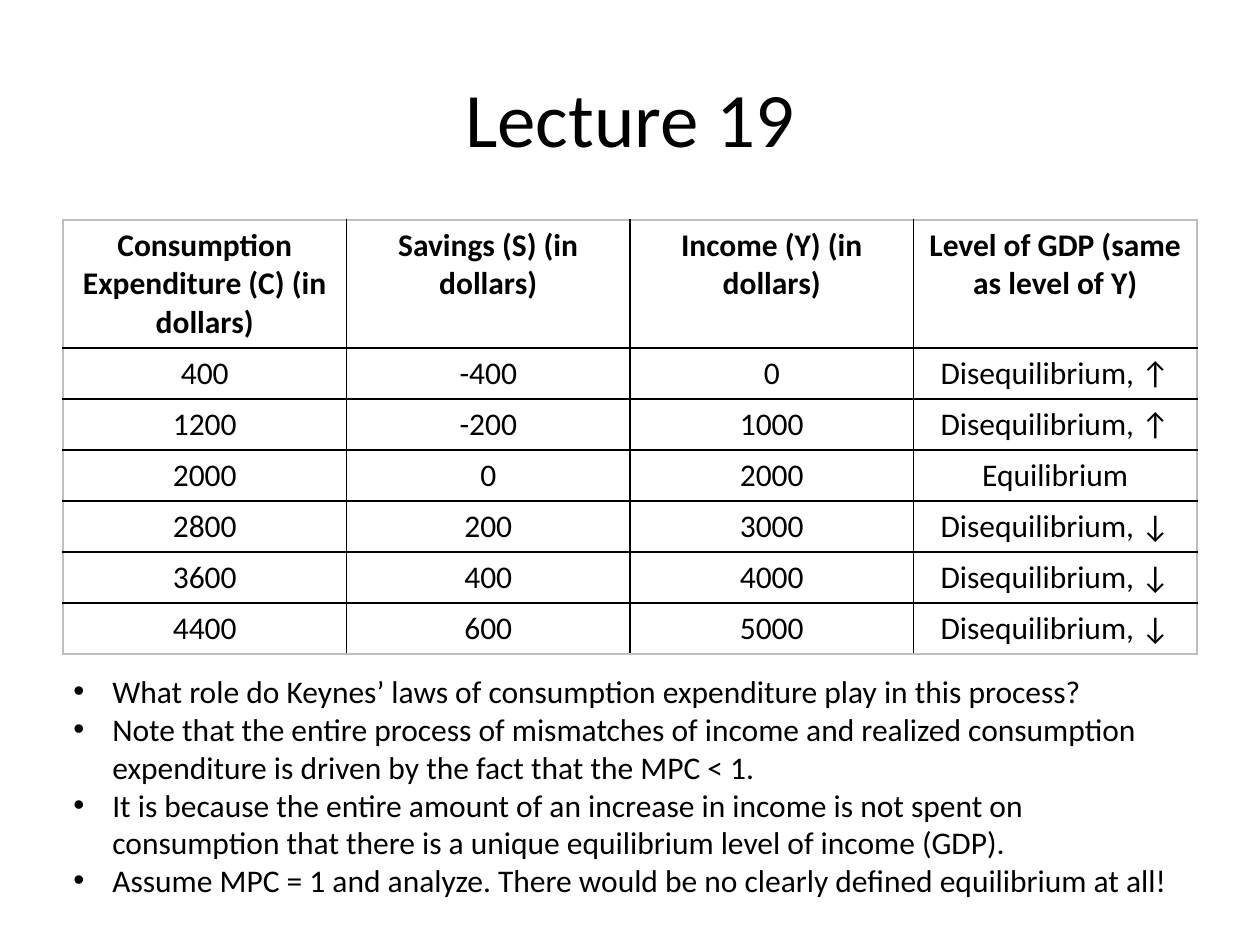
"""Build the Lecture 19 slide: an equilibrium table above four discussion points."""
from dataclasses import dataclass

from lxml import etree
from pptx import Presentation
from pptx.dml.color import RGBColor
from pptx.enum.text import MSO_ANCHOR, PP_ALIGN
from pptx.oxml.ns import qn
from pptx.util import Pt

CENTER = PP_ALIGN.CENTER
LEFT = PP_ALIGN.LEFT
MIDDLE = MSO_ANCHOR.MIDDLE
TOP = MSO_ANCHOR.TOP

EMU_PER_PX = 914400 / 126
COLORS = {"text": "000000", "grid": "000000", "frame": "BFBFBF"}
FONT = "Calibri"
BODY_SIZE = 18
BORDER_EMU = 12700
HEADER_HEIGHT = 128
ROW_HEIGHT = 51
BULLET_INDENT = 39


@dataclass(frozen=True)
class Box:
    left: int
    top: int
    width: int
    height: int

    def emu(self) -> tuple[int, ...]:
        return tuple(px(value) for value in (self.left, self.top, self.width, self.height))


@dataclass(frozen=True)
class TextBlock:
    box: Box
    lines: tuple[str, ...]
    size: int
    alignment: PP_ALIGN
    anchor: MSO_ANCHOR
    bulleted: bool


UP = "Disequilibrium, ↑"
DOWN = "Disequilibrium, ↓"
TABLE_ROWS = (
    ("Consumption Expenditure (C) (in dollars)", "Savings (S) (in dollars)",
     "Income (Y) (in dollars)", "Level of GDP (same as level of Y)"),
    ("400", "-400", "0", UP),
    ("1200", "-200", "1000", UP),
    ("2000", "0", "2000", "Equilibrium"),
    ("2800", "200", "3000", DOWN),
    ("3600", "400", "4000", DOWN),
    ("4400", "600", "5000", DOWN),
)
TABLE_BOX = Box(63, 220, 1134, HEADER_HEIGHT + ROW_HEIGHT * (len(TABLE_ROWS) - 1))
TEXT_BLOCKS = (
    TextBlock(Box(63, 38, 1134, 158), ("Lecture 19",), 44, CENTER, MIDDLE, False),
    TextBlock(Box(61, 666, 1136, 242), (
        "What role do Keynes’ laws of consumption expenditure play in this process?",
        "Note that the entire process of mismatches of income and realized consumption "
        "expenditure is driven by the fact that the MPC < 1.",
        "It is because the entire amount of an increase in income is not spent on "
        "consumption that there is a unique equilibrium level of income (GDP).",
        "Assume MPC = 1 and analyze. There would be no clearly defined equilibrium at all!",
    ), BODY_SIZE, LEFT, TOP, True),
)


def px(value: int) -> int:
    return round(value * EMU_PER_PX)


def write(paragraph, text: str, size: int, alignment: PP_ALIGN, bold: bool = False) -> None:
    paragraph.text = text
    paragraph.alignment = alignment
    paragraph.font.name = FONT
    paragraph.font.size = Pt(size)
    paragraph.font.bold = bold
    paragraph.font.color.rgb = RGBColor.from_string(COLORS["text"])


def add_bullet(paragraph) -> None:
    properties = paragraph._p.get_or_add_pPr()
    properties.set("marL", str(px(BULLET_INDENT)))
    properties.set("indent", str(-px(BULLET_INDENT)))
    font = etree.Element(qn("a:buFont"), typeface="Arial")
    bullet = etree.Element(qn("a:buChar"), char="•")
    properties.insert_element_before(font, "a:defRPr")
    properties.insert_element_before(bullet, "a:defRPr")


def add_text(slide, block: TextBlock) -> None:
    frame = slide.shapes.add_textbox(*block.box.emu()).text_frame
    frame.word_wrap = True
    frame.vertical_anchor = block.anchor
    for index, line in enumerate(block.lines):
        paragraph = frame.add_paragraph() if index else frame.paragraphs[0]
        write(paragraph, line, block.size, block.alignment)
        if block.bulleted:
            add_bullet(paragraph)


def set_borders(cell, outer_sides: dict[str, bool]) -> None:
    properties = cell._tc.get_or_add_tcPr()
    for position, (side, is_outer) in enumerate(outer_sides.items()):
        line = etree.Element(qn(f"a:ln{side}"), w=str(BORDER_EMU))
        fill = etree.SubElement(line, qn("a:solidFill"))
        etree.SubElement(fill, qn("a:srgbClr"), val=COLORS["frame" if is_outer else "grid"])
        properties.insert(position, line)


def add_table(slide, box: Box, rows: tuple[tuple[str, ...], ...]) -> None:
    last_row, last_column = len(rows) - 1, len(rows[0]) - 1
    table = slide.shapes.add_table(len(rows), len(rows[0]), *box.emu()).table
    table.first_row = False
    table.horz_banding = False
    for row_index, values in enumerate(rows):
        table.rows[row_index].height = px(ROW_HEIGHT if row_index else HEADER_HEIGHT)
        for column_index, value in enumerate(values):
            cell = table.cell(row_index, column_index)
            cell.fill.background()
            write(cell.text_frame.paragraphs[0], value, BODY_SIZE, CENTER, row_index == 0)
            set_borders(cell, {
                "L": column_index == 0,
                "R": column_index == last_column,
                "T": row_index == 0,
                "B": row_index == last_row,
            })


def main() -> None:
    presentation = Presentation()
    presentation.slide_width = px(1260)
    presentation.slide_height = px(945)
    slide = presentation.slides.add_slide(presentation.slide_layouts[6])
    title, points = TEXT_BLOCKS
    add_text(slide, title)
    add_table(slide, TABLE_BOX, TABLE_ROWS)
    add_text(slide, points)
    presentation.save("out.pptx")


if __name__ == "__main__":
    main()
